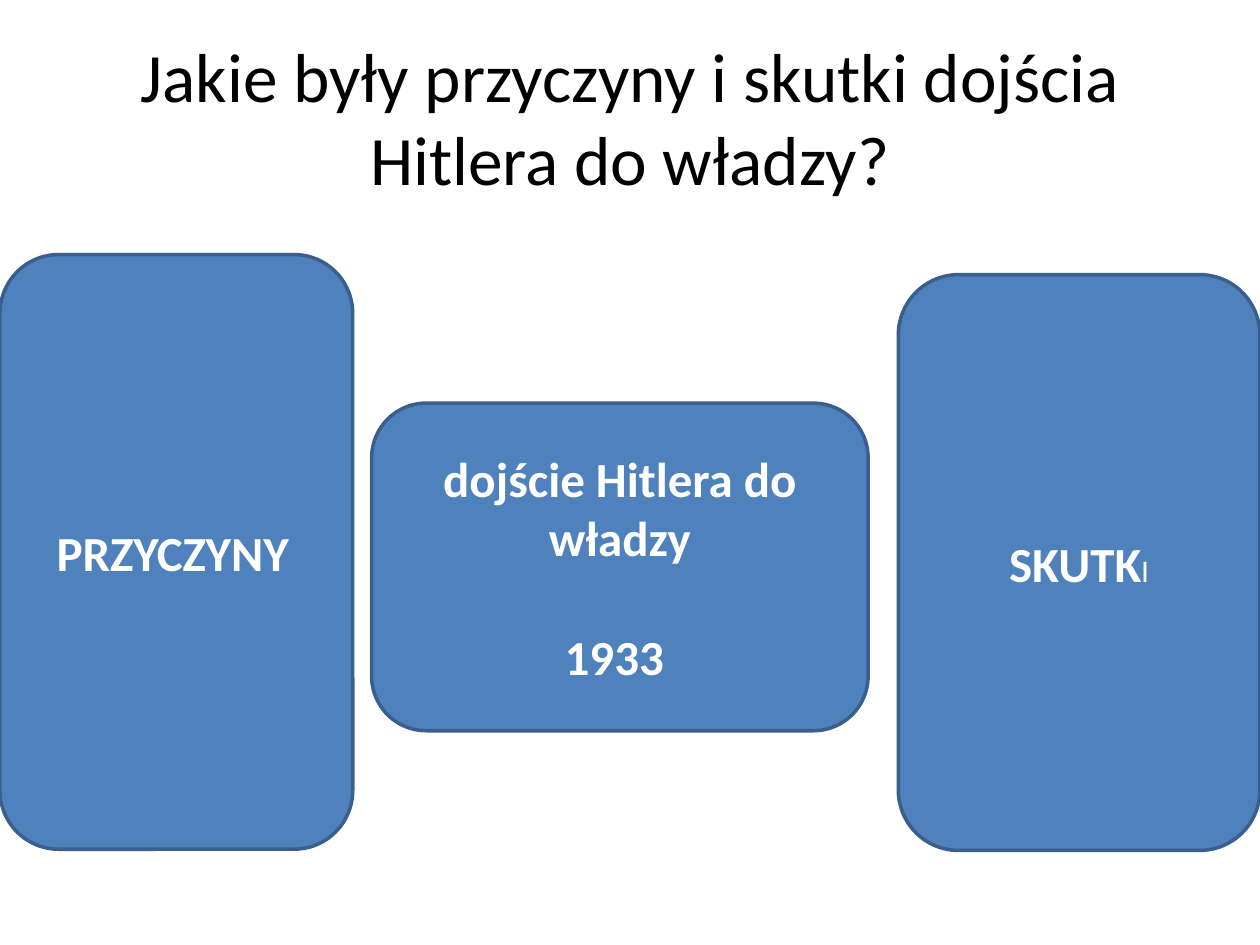
from dataclasses import dataclass

from pptx import Presentation
from pptx.dml.color import RGBColor
from pptx.enum.shapes import MSO_SHAPE as Shape
from pptx.enum.text import MSO_ANCHOR as Anchor, MSO_AUTO_SIZE as AutoSize, PP_ALIGN as Align
from pptx.util import Inches, Pt

TITLE_ONLY = 5
COLUMNS, ROWS = 100, 75


@dataclass(frozen=True)
class Theme:
    font: str = "Calibri"
    ink: str = "000000"
    on_fill: str = "FFFFFF"
    fill: str = "4F81BD"
    outline: str = "3A5F8C"
    title_size: float = 39.6
    strong_size: float = 28
    small_size: float = 18
    outline_width: float = 2
    year_gap: float = 34


class SlideBuilder:
    def __init__(self, deck, theme):
        self.theme = theme
        self.column = deck.slide_width / COLUMNS
        self.row = deck.slide_height / ROWS
        self.slide = deck.slides.add_slide(deck.slide_layouts[TITLE_ONLY])

    def area(self, left, top, width, height):
        """Turn grid columns and rows into lengths."""
        return (round(left * self.column), round(top * self.row),
                round(width * self.column), round(height * self.row))

    def run(self, paragraph, text, size, color, bold=False):
        run = paragraph.add_run()
        run.text = text
        font = run.font
        font.name, font.size, font.bold = self.theme.font, Pt(size), bold
        font.color.rgb = RGBColor.from_string(color)

    def title(self, text, area):
        heading = self.slide.shapes.title
        heading.left, heading.top, heading.width, heading.height = self.area(*area)
        frame = heading.text_frame
        frame.auto_size = AutoSize.NONE
        frame.word_wrap = True
        frame.vertical_anchor = Anchor.MIDDLE
        frame.paragraphs[0].alignment = Align.CENTER
        self.run(frame.paragraphs[0], text, self.theme.title_size, self.theme.ink)

    def card(self, area, paragraphs):
        """Each paragraph is a list of (text, strong) runs."""
        theme = self.theme
        card = self.slide.shapes.add_shape(Shape.ROUNDED_RECTANGLE, *self.area(*area))
        card.shadow.inherit = False
        card.fill.solid()
        card.fill.fore_color.rgb = RGBColor.from_string(theme.fill)
        card.line.color.rgb = RGBColor.from_string(theme.outline)
        card.line.width = Pt(theme.outline_width)
        frame = card.text_frame
        frame.word_wrap = True
        frame.vertical_anchor = Anchor.MIDDLE
        for index, runs in enumerate(paragraphs):
            paragraph = frame.add_paragraph() if index else frame.paragraphs[0]
            paragraph.alignment = Align.CENTER
            if index:
                paragraph.space_before = Pt(theme.year_gap)
            for text, strong in runs:
                size = theme.strong_size if strong else theme.small_size
                self.run(paragraph, text, size, theme.on_fill, strong)


def main():
    deck = Presentation()
    deck.slide_width, deck.slide_height = Inches(10), Inches(7.5)
    builder = SlideBuilder(deck, Theme())

    # Question
    builder.title("Jakie były przyczyny i skutki dojścia Hitlera do władzy?",
                  (5, 3, 90, 12.5))

    # Causes and effects on either side of the event
    builder.card((0, 20.2, 28, 47.2), [[("PRZYCZYNY", True), (" ", False)]])
    builder.card((71.3, 21.8, 28.7, 45.7), [[("SKUTK", True), ("I", False)]])

    # Event and its year
    builder.card((29.5, 32, 39.4, 26),
                 [[("dojście Hitlera do władzy", True)], [("1933 ", True)]])

    deck.save("out.pptx")


if __name__ == "__main__":
    main()
